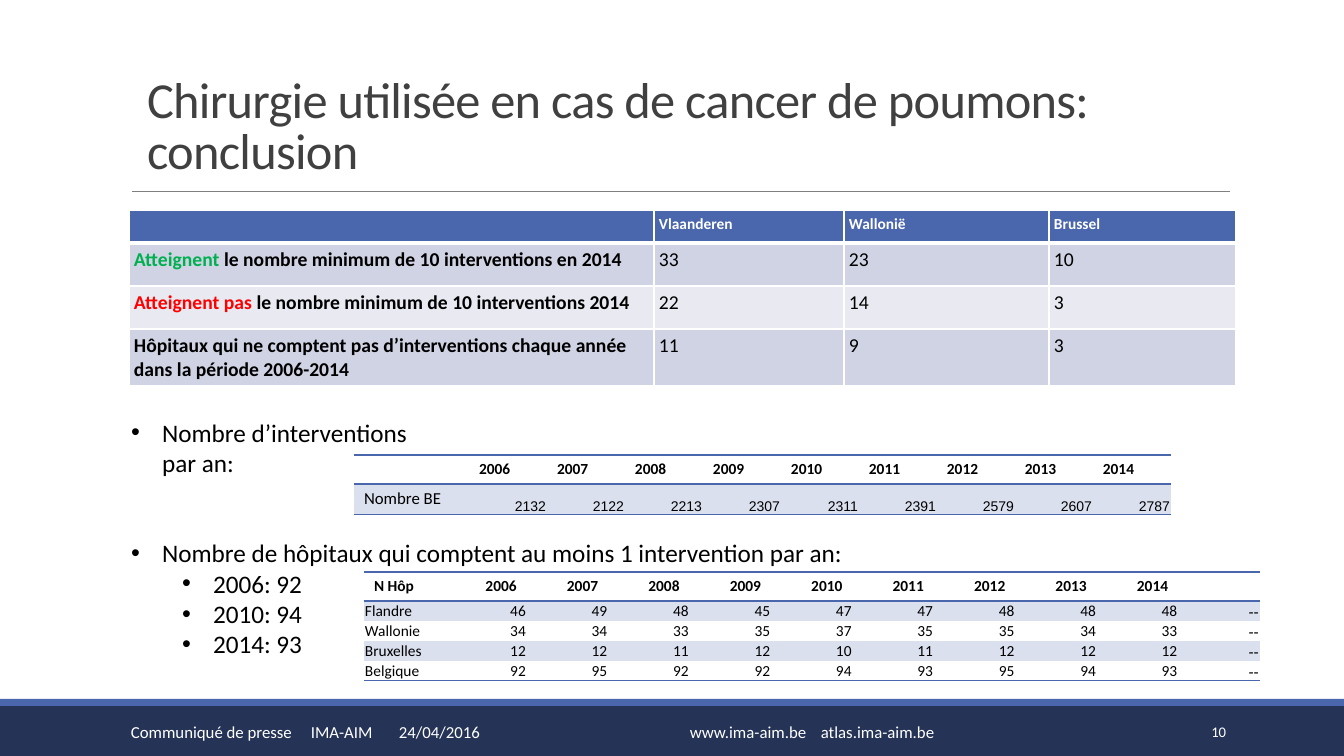
from lxml.etree import SubElement
from pptx import Presentation
from pptx.dml.color import RGBColor
from pptx.enum.shapes import MSO_CONNECTOR, MSO_SHAPE
from pptx.enum.text import MSO_ANCHOR, MSO_AUTO_SIZE, PP_ALIGN
from pptx.oxml.ns import qn
from pptx.util import Emu, Pt

BLUE = RGBColor(0x4A, 0x66, 0xAC)
NAVY = RGBColor(0x25, 0x33, 0x56)
PALE_BLUE = RGBColor(0xDB, 0xE0, 0xEE)
BAND_DARK = RGBColor(0xD0, 0xD3, 0xE3)
BAND_LIGHT = RGBColor(0xE9, 0xEA, 0xF1)
WHITE = RGBColor(0xFF, 0xFF, 0xFF)
BLACK = RGBColor(0x00, 0x00, 0x00)
DARK_GREY = RGBColor(0x40, 0x40, 0x40)
GREY = RGBColor(0x80, 0x80, 0x80)
GREEN = RGBColor(0x00, 0xB0, 0x50)
RED = RGBColor(0xFF, 0x00, 0x00)
NO_STYLE = "{2D5ABB26-0587-4C30-8999-92F81FD0307C}"


def px(count):
    return Emu(round(count * 914400 / 100.8))


def fill_cell(cell, spans, size, fill=None, bold=False, borders=(), margin=None,
              anchor=MSO_ANCHOR.TOP, align=PP_ALIGN.LEFT, font="Calibri"):
    properties = cell._tc.get_or_add_tcPr()
    for side, color, width in borders:
        line = SubElement(properties, qn(f"a:ln{side}"), w=str(Pt(width)))
        SubElement(SubElement(line, qn("a:solidFill")), qn("a:srgbClr"), val=str(color))
    if fill is None:
        cell.fill.background()
    else:
        cell.fill.solid()
        cell.fill.fore_color.rgb = fill
    if margin is not None:
        cell.margin_left = cell.margin_right = cell.margin_top = px(margin)
        cell.margin_bottom = px(margin if margin > 1 else 0)
    cell.vertical_anchor = anchor
    para = cell.text_frame.paragraphs[0]
    para.alignment = align
    for text, color in spans:
        span = para.add_run()
        span.text = text
        span.font.name = font
        span.font.size = Pt(size)
        span.font.bold = bold
        span.font.color.rgb = color
    if not spans:
        SubElement(para._p, qn("a:endParaRPr"), sz=str(size * 100))


deck = Presentation()
deck.slide_width = px(1344)
deck.slide_height = px(756)
page = deck.slides.add_slide(deck.slide_layouts[1])
title, body = page.placeholders

for top, height, color in [(706, 50, NAVY), (699, 7, BLUE)]:
    bar = page.shapes.add_shape(MSO_SHAPE.RECTANGLE, 0, px(top), px(1344), px(height))
    bar.shadow.inherit = False
    bar.fill.solid()
    bar.fill.fore_color.rgb = color
    bar.line.fill.background()

rule = page.shapes.add_connector(MSO_CONNECTOR.STRAIGHT, px(132), px(191), px(1230), px(191))
rule.line.color.rgb = GREY
rule.line.width = Pt(0.5)
SubElement(rule._element.spPr, qn("a:effectLst"))

title.left, title.top, title.width, title.height = px(137), px(25), px(1109), px(160)
title.text_frame.auto_size = MSO_AUTO_SIZE.NONE
title.text_frame.vertical_anchor = MSO_ANCHOR.BOTTOM
para = title.text_frame.paragraphs[0]
para.alignment = PP_ALIGN.LEFT
para.line_spacing = 0.85
span = para.add_run()
span.text = "Chirurgie utilisée en cas de cancer de poumons: conclusion"
span.font.name = "Calibri"
span.font.size = Pt(36)
span.font.color.rgb = DARK_GREY
span.font._element.set("spc", "-50")

footers = [
    (121, 412, "Communiqué de presse\tIMA-AIM\t24/04/2016", 12, PP_ALIGN.LEFT, [180, 268]),
    (680, 300, "www.ima-aim.be\tatlas.ima-aim.be", 12, PP_ALIGN.LEFT, [131]),
    (1092, 144, "10", 10.5, PP_ALIGN.RIGHT, []),
]
for left, width, text, size, align, stops in footers:
    box = page.shapes.add_textbox(px(left), px(712), px(width), px(40))
    box.text_frame.word_wrap = True
    box.text_frame.vertical_anchor = MSO_ANCHOR.MIDDLE
    para = box.text_frame.paragraphs[0]
    para.alignment = align
    if stops:
        tabs = SubElement(para._p.get_or_add_pPr(), qn("a:tabLst"))
        for stop in stops:
            SubElement(tabs, qn("a:tab"), pos=str(px(stop)), algn="l")
    span = para.add_run()
    span.text = text
    span.font.name = "Calibri"
    span.font.size = Pt(size)
    span.font.color.rgb = WHITE

body.left, body.top, body.width, body.height = px(121), px(412), px(1107), px(256)
body.text_frame.auto_size = MSO_AUTO_SIZE.NONE
bullets = [
    (0, 0, ["Nombre d’interventions", "par an:"]),
    (0, 43, ["Nombre de hôpitaux qui comptent au moins 1 intervention par an:"]),
    (1, 0, ["2006: 92"]),
    (1, 0, ["2010: 94"]),
    (1, 0, ["2014: 93"]),
]
for index, (level, space, lines) in enumerate(bullets):
    para = body.text_frame.paragraphs[0] if index == 0 else body.text_frame.add_paragraph()
    para.level = level
    para.space_before = Pt(space)
    properties = para._p.get_or_add_pPr()
    properties.set("marL", str(px(82 if level else 31)))
    properties.set("indent", str(-px(31)))
    SubElement(properties, qn("a:buFont"), typeface="Arial")
    SubElement(properties, qn("a:buChar"), char="•")
    for number, text in enumerate(lines):
        if number:
            para.add_line_break()
        span = para.add_run()
        span.text = text
        span.font.name = "Calibri"
        span.font.size = Pt(18)
        span.font.color.rgb = BLACK

years = [str(year) for year in range(2006, 2015)]
hospitals = [
    ["N Hôp", *years, ""],
    ["Flandre", 46, 49, 48, 45, 47, 47, 48, 48, 48, "--"],
    ["Wallonie", 34, 34, 33, 35, 37, 35, 35, 34, 33, "--"],
    ["Bruxelles", 12, 12, 11, 12, 10, 11, 12, 12, 12, "--"],
    ["Belgique", 92, 95, 92, 92, 94, 93, 95, 94, 93, "--"],
]
operations = [["", *years], ["Nombre BE", 2132, 2122, 2213, 2307, 2311, 2391, 2579, 2607, 2787]]
regions = [
    [[], "Vlaanderen", "Wallonië", "Brussel"],
    [[("Atteignent", GREEN), (" le nombre minimum de 10 interventions en 2014", BLACK)], 33, 23, 10],
    [[("Atteignent pas ", RED), ("le nombre minimum de 10 interventions 2014", BLACK)], 22, 14, 3],
    [[("Hôpitaux qui ne comptent pas d’interventions chaque année dans la période 2006-2014", BLACK)],
     11, 9, 3],
]

layouts = [
    (364, 572, [896 / 11] * 11, [29] + [20] * 4),
    (354, 455, [115] + [78] * 9, [29, 30]),
    (129, 210, [525, 190, 205, 187], [33, 43, 43, 57]),
]
grids = []
for left, top, widths, heights in layouts:
    frame = page.shapes.add_table(len(heights), len(widths), px(left), px(top),
                                  px(sum(widths)), px(sum(heights)))
    grid = frame.table
    grid.horz_banding = False
    grid._tbl.tblPr.find(qn("a:tableStyleId")).text = NO_STYLE
    for column, width in zip(grid.columns, widths):
        column.width = px(width)
    for row, height in zip(grid.rows, heights):
        row.height = px(height)
    grids.append(grid)
hospital_grid, operation_grid, region_grid = grids

top_line, bottom_line = ("T", BLUE, 1), ("B", BLUE, 1)
for r, row in enumerate(hospitals):
    for c, value in enumerate(row):
        fill_cell(hospital_grid.cell(r, c), [(str(value), BLACK)] if value else [], 11,
                  fill=PALE_BLUE if r % 2 else None, bold=r == 0,
                  borders=[top_line, bottom_line] if r == 0 else [bottom_line] if r == 4 else [],
                  margin=1 if r else None,
                  anchor=MSO_ANCHOR.BOTTOM if r else MSO_ANCHOR.TOP,
                  align=PP_ALIGN.RIGHT if c else PP_ALIGN.LEFT,
                  font="Arial" if value == "--" else "Calibri")

for r, row in enumerate(operations):
    for c, value in enumerate(row):
        figure = r > 0 and c > 0
        fill_cell(operation_grid.cell(r, c), [(str(value), BLACK)] if value else [],
                  10 if figure else 12 if r else 11,
                  fill=PALE_BLUE if r else None, bold=r == 0,
                  borders=[bottom_line] if r else [top_line, bottom_line],
                  margin=1 if figure else None,
                  anchor=MSO_ANCHOR.BOTTOM if figure else MSO_ANCHOR.TOP,
                  align=PP_ALIGN.RIGHT if figure else PP_ALIGN.LEFT,
                  font="Arial" if figure else "Calibri")

for r, row in enumerate(regions):
    for c, value in enumerate(row):
        spans = [(str(value), BLACK if r else WHITE)] if c else value
        fill_cell(region_grid.cell(r, c), spans, 14 if r else 11,
                  fill=(BAND_DARK if r % 2 else BAND_LIGHT) if r else BLUE,
                  bold=r == 0 or c == 0,
                  borders=[("L", WHITE, 1), ("R", WHITE, 1), ("T", WHITE, 3 if r == 1 else 1),
                           ("B", WHITE, 1 if r else 3)],
                  margin=5)

deck.save("out.pptx")
